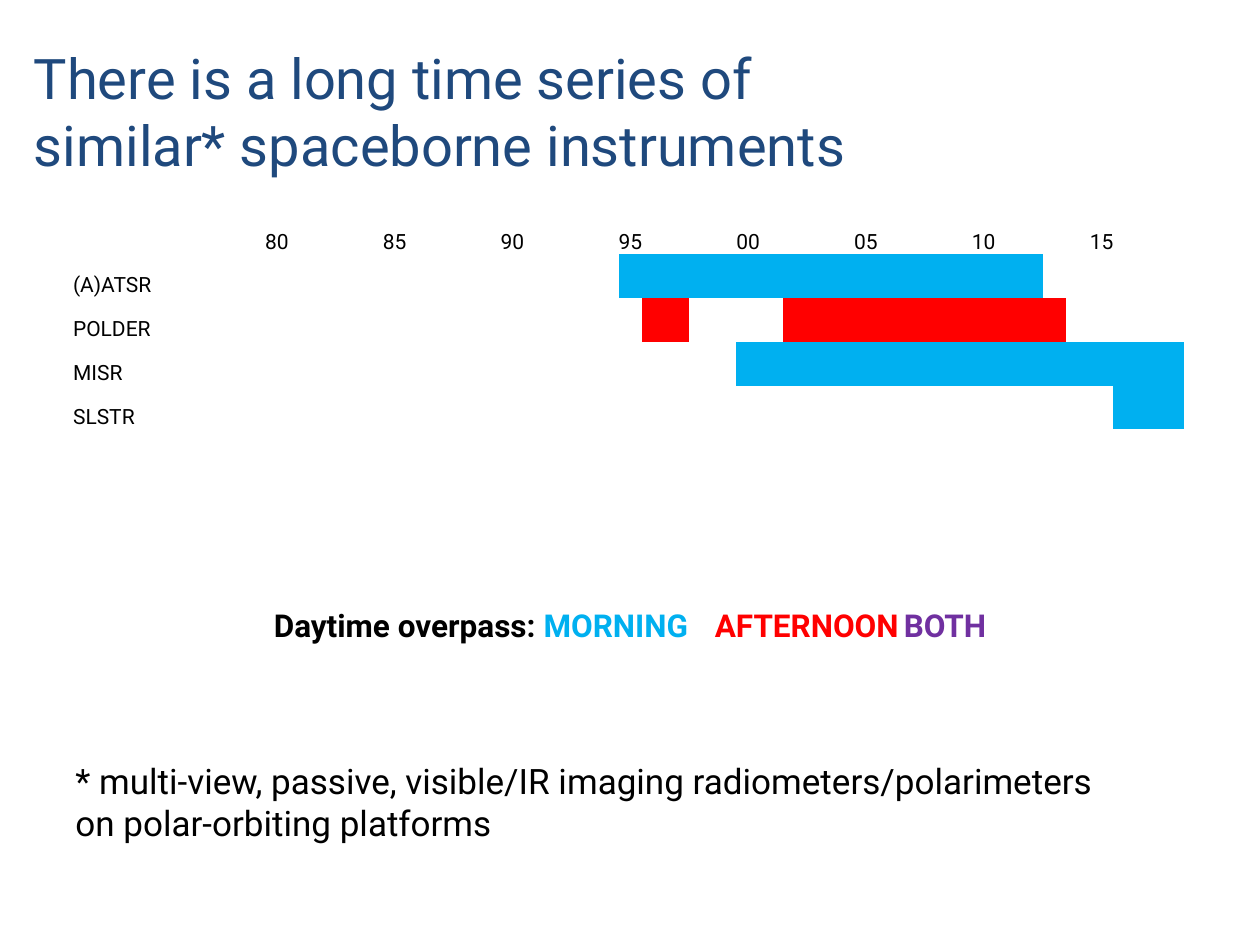
from pptx import Presentation
from pptx.dml.color import RGBColor
from pptx.enum.text import MSO_ANCHOR, PP_ALIGN
from pptx.util import Inches, Pt

BLANK_LAYOUT = 6
CENTER, LEFT = PP_ALIGN.CENTER, PP_ALIGN.LEFT
TOP, MIDDLE, BOTTOM = MSO_ANCHOR.TOP, MSO_ANCHOR.MIDDLE, MSO_ANCHOR.BOTTOM
FONT = "Roboto"
NO_STYLE_NO_GRID = "{2D5ABB26-0587-4C30-8999-92F81FD0307C}"
COLORS = {
    "title": "1F497D",
    "text": "000000",
    "morning": "00B0F0",
    "afternoon": "FF0000",
    "both": "7030A0",
}

FIRST_YEAR, LAST_YEAR = 1978, 2018
LABELLED_YEARS = range(1980, 2016, 5)
LABEL_WIDTH = 1.15
# Instrument, overpass, and the first and last year of each period in orbit
INSTRUMENTS = [
    ("(A)ATSR", "morning", [(1995, 2012)]),
    ("POLDER", "afternoon", [(1996, 1997), (2002, 2013)]),
    ("MISR", "morning", [(2000, 2018)]),
    ("SLSTR", "morning", [(2016, 2018)]),
]


def add_run(paragraph, text, size=12, color="text", bold=False):
    run = paragraph.add_run()
    run.text = text
    run.font.name = FONT
    run.font.size = Pt(size)
    run.font.bold = bold
    run.font.color.rgb = RGBColor.from_string(COLORS[color])


def add_text_frame(slide, box, anchor=TOP):
    shape = slide.shapes.add_textbox(*(Inches(length) for length in box))
    text_frame = shape.text_frame
    text_frame.word_wrap = True
    text_frame.vertical_anchor = anchor
    return text_frame


def add_lines(slide, box, lines, anchor=TOP, **text_format):
    """Add one paragraph whose lines are parted by line breaks."""
    paragraph = add_text_frame(slide, box, anchor).paragraphs[0]
    paragraph.alignment = LEFT
    for number, line in enumerate(lines):
        if number:
            paragraph.add_line_break()
        add_run(paragraph, line, **text_format)


def add_legend(slide, box):
    paragraph = add_text_frame(slide, box).paragraphs[0]
    paragraph.alignment = CENTER
    for text, color in [
        ("Daytime overpass:", "text"),
        (" MORNING\t", "morning"),
        ("AFTERNOON\t", "afternoon"),
        ("BOTH", "both"),
    ]:
        add_run(paragraph, text, size=18, color=color, bold=True)


def year_column(year):
    return year - FIRST_YEAR + 1


def add_plain_table(slide, box, row_count, column_count):
    """Add a table without style, fills or cell margins."""
    frame = slide.shapes.add_table(
        row_count, column_count, *(Inches(length) for length in box))
    table = frame.table
    table.first_row = table.horz_banding = False
    table._tbl.tblPr[0].text = NO_STYLE_NO_GRID
    for cell in table.iter_cells():
        cell.fill.background()
        cell.vertical_anchor = BOTTOM
        cell.margin_left = cell.margin_right = 0
        cell.margin_top = cell.margin_bottom = 0
    return table


def add_timeline(slide, box):
    """Add a table with a row per instrument and a column per year."""
    year_count = LAST_YEAR - FIRST_YEAR + 1
    table = add_plain_table(slide, box, len(INSTRUMENTS) + 1, year_count + 1)
    year_width = (box[2] - LABEL_WIDTH) / year_count
    for number, column in enumerate(table.columns):
        column.width = Inches(year_width if number else LABEL_WIDTH)

    for year in LABELLED_YEARS:
        cell = table.cell(0, year_column(year))
        add_run(cell.text_frame.paragraphs[0], f"{year % 100:02d}")

    for row, (name, overpass, periods) in enumerate(INSTRUMENTS, start=1):
        add_run(table.cell(row, 0).text_frame.paragraphs[0], name)
        for first, last in periods:
            for year in range(first, last + 1):
                fill = table.cell(row, year_column(year)).fill
                fill.solid()
                fill.fore_color.rgb = RGBColor.from_string(COLORS[overpass])


def main():
    presentation = Presentation()
    presentation.slide_width = Inches(10)
    presentation.slide_height = Inches(7.5)
    slide = presentation.slides.add_slide(
        presentation.slide_layouts[BLANK_LAYOUT])

    add_timeline(slide, (0.58, 1.67, 8.83, 1.74))
    add_lines(
        slide, (0.17, 0.25, 9.83, 1.25),
        ["There is a long time series of", "similar* spaceborne instruments"],
        anchor=MIDDLE, size=32, color="title")
    add_lines(
        slide, (0.5, 5.98, 8.83, 0.77),
        ["* multi-view, passive, visible/IR imaging radiometers/polarimeters",
         "on polar-orbiting platforms"],
        size=20)
    add_legend(slide, (0, 4.76, 10, 0.4))
    presentation.save("out.pptx")


if __name__ == "__main__":
    main()
